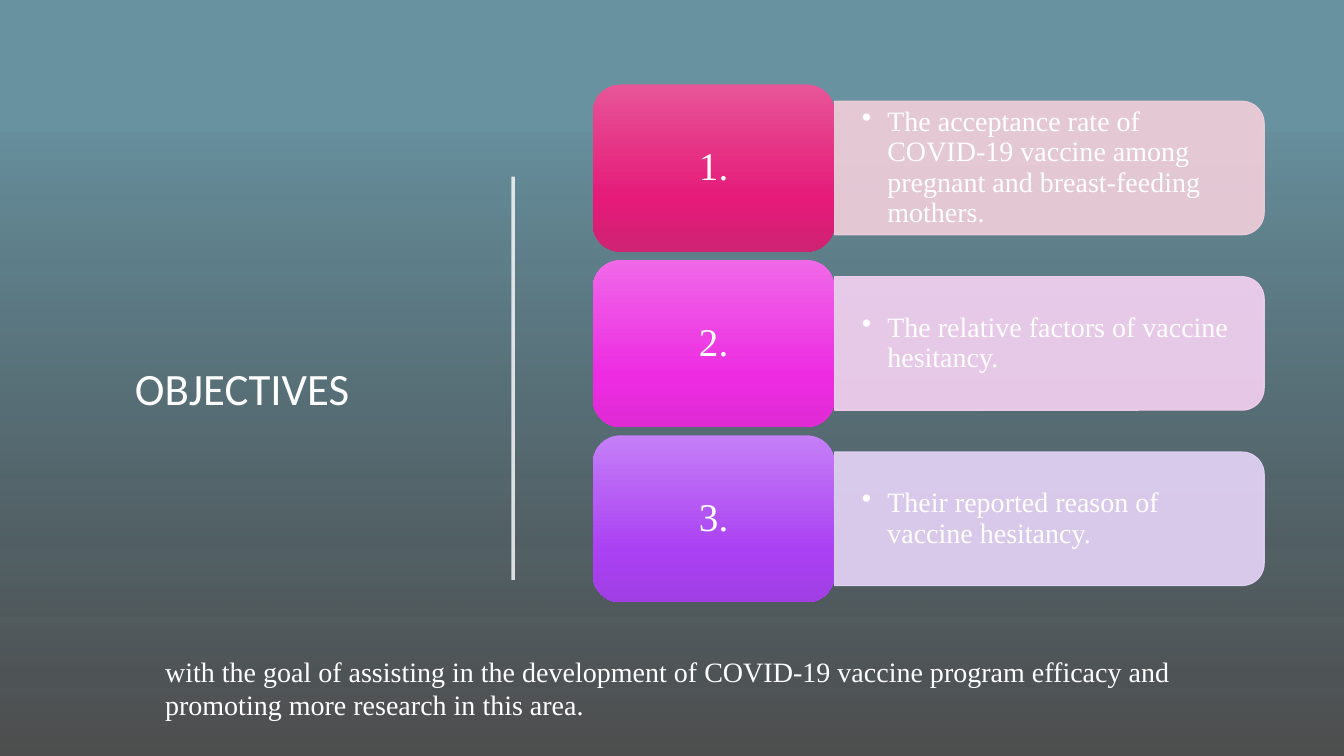
from lxml import etree
from pptx import Presentation
from pptx.dml.color import RGBColor
from pptx.enum.shapes import MSO_CONNECTOR, MSO_SHAPE
from pptx.enum.text import MSO_ANCHOR, PP_ALIGN
from pptx.oxml.ns import qn
from pptx.util import Cm, Pt

STRAIGHT = MSO_CONNECTOR.STRAIGHT
RECTANGLE = MSO_SHAPE.RECTANGLE
ROUNDED = MSO_SHAPE.ROUNDED_RECTANGLE
TOP_ROUNDED = MSO_SHAPE.ROUND_2_SAME_RECTANGLE
TOP, MIDDLE = MSO_ANCHOR.TOP, MSO_ANCHOR.MIDDLE
LEFT, CENTER = PP_ALIGN.LEFT, PP_ALIGN.CENTER

COLORS = {"background": "6892A0", "shade_top": "3C3C3C", "shade_bottom": "4E4E4E", "white": "FFFFFF"}
SERIF, SANS = "Times New Roman", "Calibri"
SLIDE_WIDTH, SLIDE_HEIGHT = 33.87, 19.05

OBJECTIVES = [
    ("The acceptance rate of COVID-19 vaccine among pregnant and breast-feeding mothers.",
     "F2CFDB", ("E75597", "E51A79", "CF2374")),
    ("The relative factors of vaccine hesitancy.",
     "F6D2F3", ("F068E8", "ED2CE2", "E02BD5")),
    ("Their reported reason of vaccine hesitancy.",
     "E7D5F9", ("C57FF7", "AA41F3", "A13FE5")),
]


def rgb(value):
    return RGBColor.from_string(value)


def set_alpha(element, percent):
    for color in element.iter(qn("a:srgbClr")):
        etree.SubElement(color, qn("a:alpha"), val=str(percent * 1000))


def add_block(slide, kind, left, top, width, height):
    block = slide.shapes.add_shape(kind, Cm(left), Cm(top), Cm(width), Cm(height))
    block.shadow.inherit = False
    block.line.fill.background()
    return block


def fill_downwards(block, stops):
    block.fill.gradient()
    block.fill.gradient_angle = 270
    stop_list = block._element.spPr.find(".//" + qn("a:gsLst"))
    for stop in list(stop_list):
        stop_list.remove(stop)
    for position, color, opacity in stops:
        stop = etree.SubElement(stop_list, qn("a:gs"), pos=str(position * 1000))
        etree.SubElement(stop, qn("a:srgbClr"), val=color)
        set_alpha(stop, opacity)


def write(shape, text, size, font=SERIF, anchor=MIDDLE, align=LEFT, spacing=None, bullet=False):
    frame = shape.text_frame
    frame.word_wrap = True
    frame.vertical_anchor = anchor
    paragraph = frame.paragraphs[0]
    paragraph.text = text
    paragraph.alignment = align
    paragraph.line_spacing = spacing
    if bullet:
        properties = paragraph._p.get_or_add_pPr()
        properties.set("marL", str(Cm(0.64)))
        properties.set("indent", str(Cm(-0.64)))
        etree.SubElement(properties, qn("a:buChar"), char="•")
    for run in paragraph.runs:
        run.font.name = font
        run.font.size = Pt(size)
        run.font.color.rgb = rgb(COLORS["white"])


def add_text(slide, left, top, width, height, text, size, **style):
    box = slide.shapes.add_textbox(Cm(left), Cm(top), Cm(width), Cm(height))
    write(box, text, size, **style)
    return box


def add_backdrop(slide, top):
    slide.background.fill.solid()
    slide.background.fill.fore_color.rgb = rgb(COLORS["background"])
    shade = add_block(slide, RECTANGLE, 0, top, SLIDE_WIDTH, SLIDE_HEIGHT - top)
    fill_downwards(shade, [(0, COLORS["shade_top"], 4), (100, COLORS["shade_bottom"], 100)])


def add_heading(slide, left, top, width, height):
    add_text(slide, left, top, width, height, "OBJECTIVES", 32, font=SANS, spacing=0.9)
    divider_left, divider_top = left + width + 0.92, top + 1.12
    divider = slide.shapes.add_connector(
        STRAIGHT, Cm(divider_left), Cm(divider_top), Cm(divider_left), Cm(divider_top + 10.16))
    divider.line.color.rgb = rgb(COLORS["white"])
    divider.line.width = Pt(2.5)
    properties = divider._element.spPr
    set_alpha(properties, 80)
    etree.SubElement(properties, qn("a:effectLst"))


def add_objective(slide, left, top, width, height, number, objective):
    text, tint, shades = objective
    card_width = 0.36 * width
    panel_left, panel_width, panel_height = left + card_width, width - card_width, 0.8 * height
    panel_top = top + (height - panel_height) / 2

    panel = add_block(slide, TOP_ROUNDED,
                      panel_left + (panel_width - panel_height) / 2,
                      top + (height - panel_width) / 2,
                      panel_height, panel_width)
    panel.rotation = 90
    panel.fill.solid()
    panel.fill.fore_color.rgb = rgb(tint)
    panel.line.color.rgb = rgb(tint)
    panel.line.width = Pt(0.75)
    set_alpha(panel._element.spPr, 90)

    description = add_text(slide, panel_left, panel_top, panel_width - 0.18, panel_height,
                           text, 20, spacing=0.9, bullet=True)
    frame = description.text_frame
    frame.margin_left = frame.margin_right = Cm(0.69)
    frame.margin_top = frame.margin_bottom = 0

    card = add_block(slide, ROUNDED, left, top, card_width, height)
    fill_downwards(card, [(position, shade, 100) for position, shade in zip((0, 69, 100), shades)])
    write(card, f"{number}.", 28, align=CENTER, spacing=0.9)


def add_objectives(slide, left, top, width, height):
    gap = 0.21
    row_height = (height - gap * (len(OBJECTIVES) - 1)) / len(OBJECTIVES)
    for index, objective in enumerate(OBJECTIVES):
        add_objective(slide, left, top + index * (row_height + gap), width, row_height,
                      index + 1, objective)


def add_goal(slide, left, top, width, height):
    add_text(slide, left, top, width, height,
             "with the goal of assisting in the development of COVID-19 vaccine program "
             "efficacy and promoting more research in this area.", 20, anchor=TOP)


def main():
    presentation = Presentation()
    presentation.slide_width = Cm(SLIDE_WIDTH)
    presentation.slide_height = Cm(SLIDE_HEIGHT)
    slide = presentation.slides.add_slide(presentation.slide_layouts[6])
    add_backdrop(slide, 3.33)
    add_heading(slide, 3.15, 3.33, 8.86, 13.06)
    add_goal(slide, 3.91, 16.36, 26.67, 1.98)
    add_objectives(slide, 14.94, 2.13, 16.92, 13.05)
    presentation.save("out.pptx")


if __name__ == "__main__":
    main()
